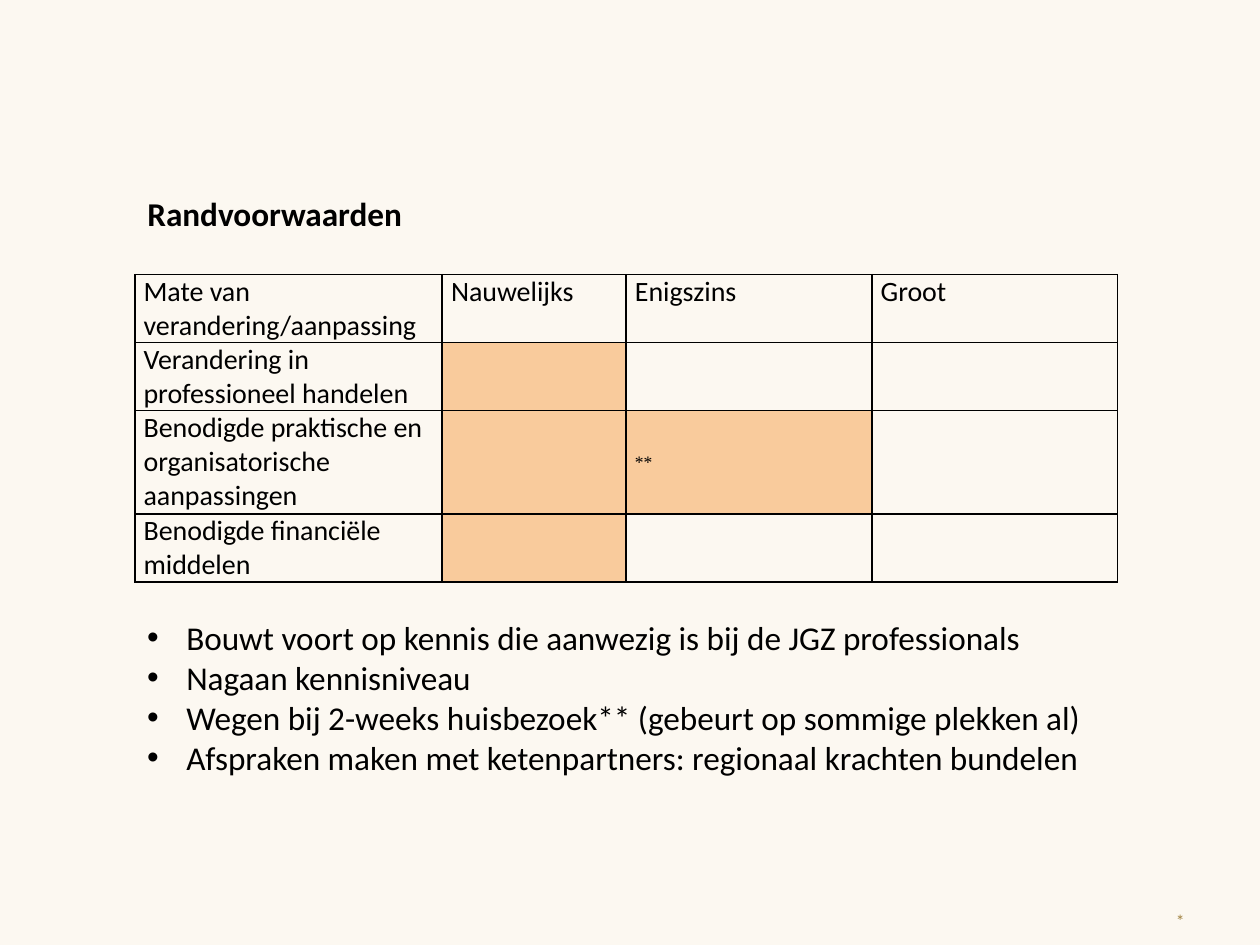
from lxml import etree
from pptx import Presentation
from pptx.dml.color import RGBColor
from pptx.enum.text import MSO_ANCHOR, PP_ALIGN
from pptx.oxml.ns import qn
from pptx.util import Inches, Pt

LEFT, RIGHT = PP_ALIGN.LEFT, PP_ALIGN.RIGHT
TOP, MIDDLE = MSO_ANCHOR.TOP, MSO_ANCHOR.MIDDLE

CREAM = RGBColor(0xFC, 0xF8, 0xF1)
BLACK = RGBColor(0x00, 0x00, 0x00)
ORANGE = RGBColor(0xF9, 0xCB, 0x9C)
OLIVE = RGBColor(0xA0, 0x82, 0x41)


def style_paragraph(para, size, color=BLACK, name="Calibri", bold=False, align=LEFT):
    para.alignment = align
    para.font.size = Pt(size)
    para.font.name = name
    para.font.bold = bold
    para.font.color.rgb = color


def add_borders(cell):
    for side in ("lnL", "lnR", "lnT", "lnB"):
        line = etree.SubElement(cell._tc.get_or_add_tcPr(), qn(f"a:{side}"), w=str(Pt(1)))
        fill = etree.SubElement(line, qn("a:solidFill"))
        etree.SubElement(fill, qn("a:srgbClr"), val=str(BLACK))


deck = Presentation()
deck.slide_width, deck.slide_height = Inches(10), Inches(7.5)
page = deck.slides.add_slide(deck.slide_layouts[5])
page.background.fill.solid()
page.background.fill.fore_color.rgb = CREAM

content_left, content_width = Inches(1.07), Inches(7.81)

# Title
title = page.shapes.title
title.left, title.top = content_left, Inches(1.48)
title.width, title.height = content_width, Inches(0.45)
title.text_frame.text = "Randvoorwaarden"
title.text_frame.vertical_anchor = TOP
style_paragraph(title.text_frame.paragraphs[0], 19, bold=True)

# Bullet list
bullets = [
    "Bouwt voort op kennis die aanwezig is bij de JGZ professionals",
    "Nagaan kennisniveau",
    "Wegen bij 2-weeks huisbezoek** (gebeurt op sommige plekken al)",
    "Afspraken maken met ketenpartners: regionaal krachten bundelen",
]
bullet_box = page.shapes.add_textbox(content_left, Inches(4.85), content_width, Inches(1.65))
bullet_box.text_frame.word_wrap = True
bullet_box.text_frame.text = "\n".join(bullets)
for para in bullet_box.text_frame.paragraphs:
    properties = para._p.get_or_add_pPr()
    properties.set("marL", str(Inches(0.31)))
    properties.set("indent", str(Inches(-0.31)))
    etree.SubElement(properties, qn("a:buFont"), typeface="Arial")
    etree.SubElement(properties, qn("a:buChar"), char="•")
    style_paragraph(para, 19)

# Footer mark
footer = page.shapes.add_textbox(Inches(7.33), Inches(7.17), Inches(2.17), Inches(0.25))
footer.text_frame.word_wrap = True
footer.text_frame.text = "*"
style_paragraph(footer.text_frame.paragraphs[0], 10, OLIVE, align=RIGHT)

# Table of the degree of change
rows = [
    ["Mate van verandering/aanpassing", "Nauwelijks", "Enigszins", "Groot"],
    ["Verandering in professioneel handelen", "", "", ""],
    ["Benodigde praktische en organisatorische aanpassingen", "", "**", ""],
    ["Benodigde financiële middelen", "", "", ""],
]
marked_cells = {(1, 1), (2, 1), (2, 2), (3, 1)}
column_widths = [2.44, 1.46, 1.95, 1.95]
row_heights = [0.54, 0.54, 0.82, 0.54]

table = page.shapes.add_table(
    len(rows), len(column_widths), content_left, Inches(2.18),
    content_width, Inches(sum(row_heights))).table
table.first_row = table.horz_banding = False
for column, width in zip(table.columns, column_widths):
    column.width = Inches(width)
for row, height in zip(table.rows, row_heights):
    row.height = Inches(height)

for row_index, texts in enumerate(rows):
    for column_index, text in enumerate(texts):
        cell = table.cell(row_index, column_index)
        cell.margin_left = cell.margin_right = Inches(0.07)
        cell.margin_top = cell.margin_bottom = 0
        add_borders(cell)
        if (row_index, column_index) in marked_cells:
            cell.fill.solid()
            cell.fill.fore_color.rgb = ORANGE
        else:
            cell.fill.background()
        cell.text = text
        para = cell.text_frame.paragraphs[0]
        if text == "**":
            cell.vertical_anchor = MIDDLE
            style_paragraph(para, 10, name="Times New Roman")
        else:
            style_paragraph(para, 16)

deck.save("out.pptx")
